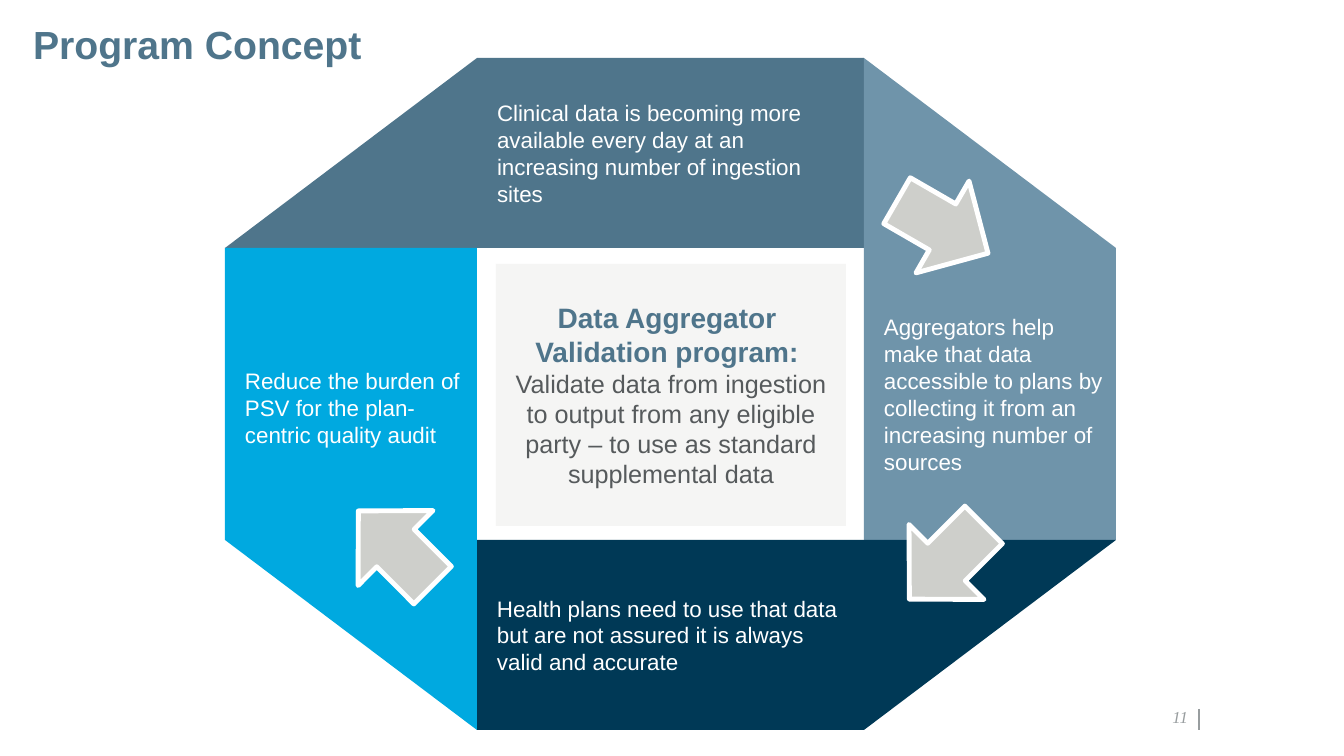
from dataclasses import dataclass

from lxml import etree
from pptx import Presentation
from pptx.dml.color import RGBColor
from pptx.enum.shapes import MSO_CONNECTOR as Connector, MSO_SHAPE as Shape
from pptx.enum.text import MSO_ANCHOR as Anchor, PP_ALIGN as Align
from pptx.oxml.ns import qn
from pptx.util import Pt

PX = 914400 / 100.8  # EMU per px

STEEL = RGBColor(0x4F, 0x75, 0x8B)
MIST = RGBColor(0x6F, 0x94, 0xAA)
NAVY = RGBColor(0x00, 0x39, 0x56)
SKY = RGBColor(0x00, 0xA9, 0xE0)
STONE = RGBColor(0xCE, 0xCF, 0xCB)
CHARCOAL = RGBColor(0x56, 0x5A, 0x5C)
GREY = RGBColor(0x98, 0x9D, 0x9F)
WHITE = RGBColor(0xFF, 0xFF, 0xFF)

# Grid lines of the octagon
X1, X2, X3, X4 = 225, 477, 864, 1116
Y1, Y2, Y3, Y4 = 58, 248, 540, 730
LINE = 27  # height of one text line


@dataclass(frozen=True)
class Box:
    left: int
    top: int
    width: int
    height: int

    def emu(self) -> list[int]:
        return [px(n) for n in (self.left, self.top, self.width, self.height)]


@dataclass(frozen=True)
class Panel:
    points: tuple[tuple[int, int], ...]
    color: RGBColor
    text_box: Box
    text: str


@dataclass(frozen=True)
class Arrow:
    left: int
    top: int
    rotation: int


PANELS = [
    Panel(((X2, Y1), (X3, Y1), (X3, Y2), (X1, Y2)), STEEL,
          Box(X2, Y1, 373, Y2 - Y1),
          "Clinical data is becoming more available every day at an "
          "increasing number of ingestion sites"),
    Panel(((X3, Y1), (X4, Y2), (X4, Y3), (X3, Y3)), MIST,
          Box(X3, Y2, X4 - X3, Y3 - Y2),
          "Aggregators help make that data accessible to plans by "
          "collecting it from an increasing number of sources"),
    Panel(((X2, Y3), (X4, Y3), (X3, Y4), (X2, Y4)), NAVY,
          Box(X2, Y3, X3 - X2, Y4 - Y3),
          "Health plans need to use that data but are not assured it is "
          "always valid and accurate"),
    Panel(((X1, Y2), (X2, Y2), (X2, Y4), (X1, Y3)), SKY,
          Box(X1, Y2 + LINE, X2 - X1, Y3 - Y2 - LINE),
          "Reduce the burden of\nPSV for the plan-centric quality audit"),
]
ARROWS = [Arrow(343, 495, 225), Arrow(890, 174, 30), Arrow(894, 509, 135)]


def px(length: int) -> int:
    return round(length * PX)


def add_run(paragraph, text: str, size: int, color: RGBColor,
            bold: bool = False, italic: bool = False, name: str = "Arial") -> None:
    run = paragraph.add_run()
    run.text = text
    font = run.font
    font.name, font.size, font.bold, font.italic = name, Pt(size), bold, italic
    font.color.rgb = color


def set_frame(frame, anchor: Anchor, left: int = 0, right: int = 0) -> None:
    frame.word_wrap = True
    frame.vertical_anchor = anchor
    frame.margin_left, frame.margin_right = px(left), px(right)
    frame.margin_top = frame.margin_bottom = 0


def add_panel(slide, panel: Panel) -> None:
    builder = slide.shapes.build_freeform(*panel.points[0], scale=PX)
    builder.add_line_segments(panel.points[1:], close=True)
    shape = builder.convert_to_shape()
    shape.shadow.inherit = False
    shape.fill.solid()
    shape.fill.fore_color.rgb = panel.color
    shape.line.fill.background()


def add_panel_text(slide, panel: Panel) -> None:
    frame = slide.shapes.add_textbox(*panel.text_box.emu()).text_frame
    set_frame(frame, Anchor.MIDDLE, left=20, right=10)
    for index, text in enumerate(panel.text.split("\n")):
        paragraph = frame.add_paragraph() if index else frame.paragraphs[0]
        paragraph.line_spacing = Pt(19.2)
        add_run(paragraph, text, 16, WHITE)


def add_arrow(slide, arrow: Arrow) -> None:
    box = Box(arrow.left, arrow.top, 105, 106)
    shape = slide.shapes.add_shape(Shape.RIGHT_ARROW, *box.emu())
    shape.rotation = arrow.rotation
    shape.shadow.inherit = False
    shape.fill.solid()
    shape.fill.fore_color.rgb = STONE
    shape.line.color.rgb = WHITE
    shape.line.width = Pt(3.5)


def add_center(slide) -> None:
    shape = slide.shapes.add_shape(Shape.RECTANGLE, *Box(496, 264, 350, 262).emu())
    shape.shadow.inherit = False
    shape.fill.solid()
    shape.fill.fore_color.rgb = STONE
    color = shape.fill._xPr.find(qn("a:solidFill"))[0]
    etree.SubElement(color, qn("a:alpha")).set("val", "20000")
    shape.line.fill.background()
    frame = shape.text_frame
    set_frame(frame, Anchor.MIDDLE, left=10, right=10)
    heading, body = frame.paragraphs[0], frame.add_paragraph()
    heading.alignment = body.alignment = Align.CENTER
    add_run(heading, "Data Aggregator ", 20, STEEL, bold=True)
    heading.add_line_break()
    add_run(heading, "Validation program: ", 20, STEEL, bold=True)
    add_run(body, "Validate data from ingestion to output from any eligible "
                  "party – to use as standard supplemental data", 18, CHARCOAL)


def add_title(slide) -> None:
    title = slide.shapes.title
    title.left, title.top, title.width, title.height = Box(33, 26, 1277, 41).emu()
    set_frame(title.text_frame, Anchor.TOP, right=10)
    paragraph = title.text_frame.paragraphs[0]
    paragraph.alignment = Align.LEFT
    paragraph.line_spacing = 0.9
    add_run(paragraph, "Program Concept", 28, STEEL, bold=True)


def add_page_number(slide) -> None:
    line = slide.shapes.add_connector(
        Connector.STRAIGHT, px(1199), px(709), px(1199), px(730))
    line.line.color.rgb = GREY
    line.line.width = Pt(1)
    etree.SubElement(line._element.spPr, qn("a:effectLst"))
    frame = slide.shapes.add_textbox(*Box(1108, 709, 80, 18).emu()).text_frame
    set_frame(frame, Anchor.BOTTOM)
    paragraph = frame.paragraphs[0]
    paragraph.alignment = Align.RIGHT
    add_run(paragraph, "11", 12, GREY, italic=True, name="Times New Roman")


def main() -> None:
    presentation = Presentation()
    presentation.slide_width, presentation.slide_height = px(1344), px(756)
    slide = presentation.slides.add_slide(presentation.slide_layouts[5])

    # Title and page number
    add_page_number(slide)
    add_title(slide)

    # Octagon with the program in its centre
    for panel in PANELS:
        add_panel(slide, panel)
    add_center(slide)
    for panel in PANELS:
        add_panel_text(slide, panel)

    # Arrows from step to step
    for arrow in ARROWS:
        add_arrow(slide, arrow)

    presentation.save("out.pptx")


if __name__ == "__main__":
    main()
